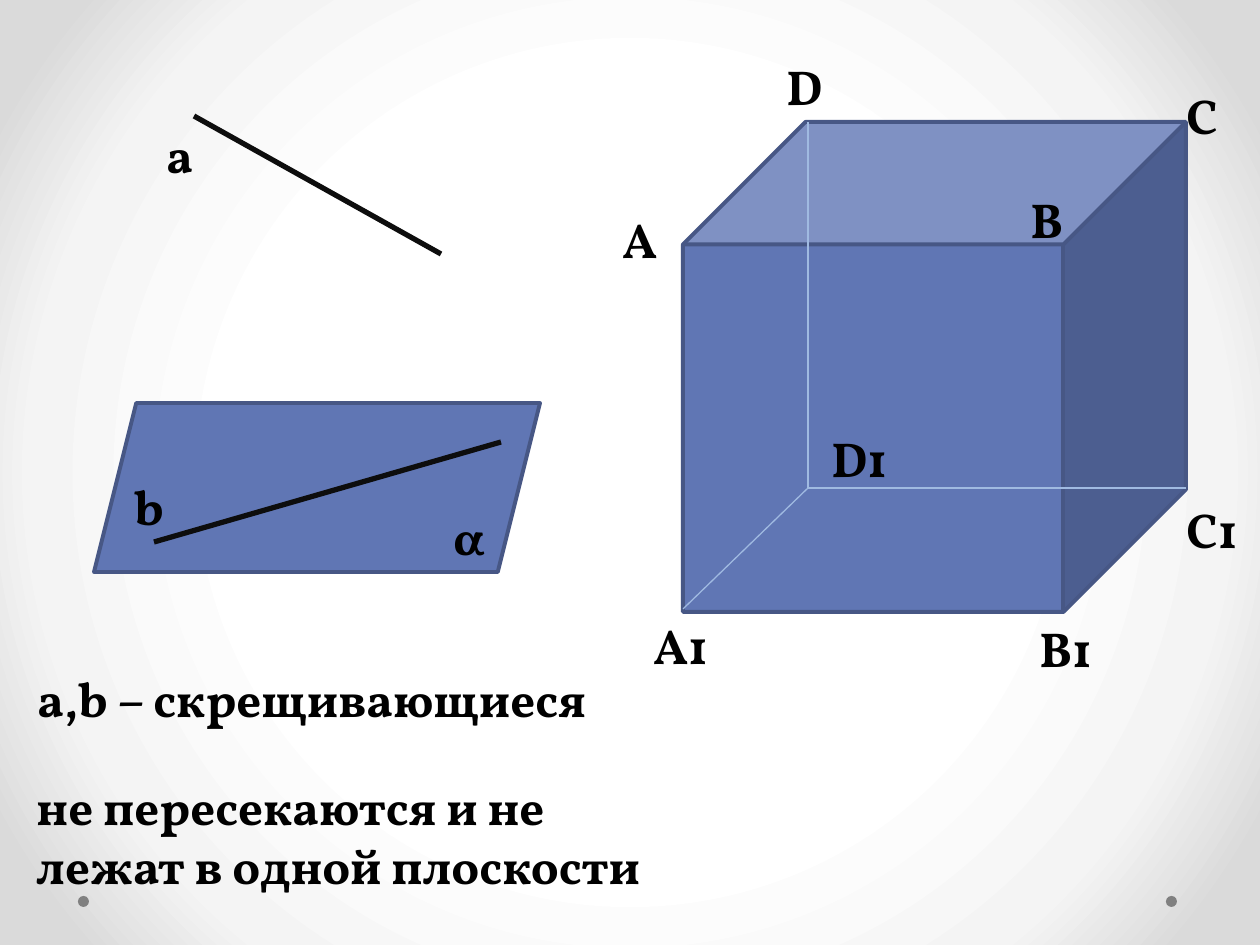
from dataclasses import dataclass

from lxml import etree
from pptx import Presentation
from pptx import util as u
from pptx.dml.color import RGBColor
from pptx.enum import shapes, text
from pptx.oxml import parse_xml
from pptx.oxml.ns import nsdecls, qn

PX = 914400 / 126  # EMU per px


def px(length):
    return u.Emu(round(length * PX))


@dataclass(frozen=True)
class Theme:
    font: str = "Vollkorn"
    size: int = 28
    ink: str = "000000"
    stroke: str = "0D0D0D"
    solid: str = "6076B4"
    edge: str = "475785"
    hidden: str = "A0BAE1"
    dot: str = "808080"
    glow: tuple = ((50, "FFFFFF"), (76, "F4F4F4"), (92, "DADADA"))


class Board:
    def __init__(self, slide, theme):
        self.slide = slide
        self.theme = theme

    def background(self):
        fill = self.slide.background.fill
        fill.gradient()
        gradient = self.slide.background._cSld.find(".//" + qn("a:gradFill"))
        stops = "".join(
            f'<a:gs pos="{pos * 1000}"><a:srgbClr val="{color}"/></a:gs>'
            for pos, color in self.theme.glow)
        radial = parse_xml(
            f'<a:gradFill {nsdecls("a")} rotWithShape="1"><a:gsLst>{stops}</a:gsLst>'
            '<a:path path="circle"><a:fillToRect l="50000" t="50000" r="50000" b="50000"/>'
            '</a:path></a:gradFill>')
        gradient.getparent().replace(gradient, radial)

    def figure(self, kind, left, top, width, height, fill, edge=None):
        figure = self.slide.shapes.add_shape(
            kind, px(left), px(top), px(width), px(height))
        figure.shadow.inherit = False
        figure.fill.solid()
        figure.fill.fore_color.rgb = RGBColor.from_string(fill)
        if edge:
            figure.line.color.rgb = RGBColor.from_string(edge)
            figure.line.width = u.Pt(2.25)
        else:
            figure.line.fill.background()

    def line(self, start, end, color, weight):
        line = self.slide.shapes.add_connector(
            shapes.MSO_CONNECTOR.STRAIGHT, *map(px, start + end))
        line.line.color.rgb = RGBColor.from_string(color)
        line.line.width = u.Pt(weight)
        etree.SubElement(line._element.spPr, qn("a:effectLst"))

    def label(self, words, left, top, width, height=72, wrap=True):
        box = self.slide.shapes.add_textbox(px(left), px(top), px(width), px(height))
        frame = box.text_frame
        frame.word_wrap = wrap
        frame.auto_size = text.MSO_AUTO_SIZE.SHAPE_TO_FIT_TEXT
        frame.text = words
        font = frame.paragraphs[0].runs[0].font
        font.name = self.theme.font
        font.size = u.Pt(self.theme.size)
        font.bold = True
        font.color.rgb = RGBColor.from_string(self.theme.ink)


def main():
    deck = Presentation()
    deck.slide_width, deck.slide_height = u.Inches(10), u.Inches(7.5)
    theme = Theme()
    board = Board(deck.slides.add_slide(deck.slide_layouts[6]), theme)
    preset = shapes.MSO_SHAPE

    # Backdrop with its two corner dots
    board.background()
    for dot_left in (1166, 78):
        board.figure(preset.OVAL, dot_left, 896, 11, 11, theme.dot)

    # Plane α with line b in it, and line a above
    board.figure(preset.PARALLELOGRAM, 94, 403, 446, 169, theme.solid, theme.edge)
    board.line((154, 542), (501, 442), theme.stroke, 3)
    board.line((194, 116), (441, 254), theme.stroke, 3)
    board.label("a", 154, 118, 49)
    board.label("b", 122, 470, 55, wrap=False)
    board.label("α", 441, 500, 159)

    # Definition
    board.label("a,b – скрещивающиеся", 25, 662, 586)
    board.label("не пересекаются и не лежат в одной плоскости", 24, 770, 660, 131)

    # Cube and the names of its vertices
    board.figure(preset.CUBE, 683, 122, 503, 490, theme.solid, theme.edge)
    vertices = (
        ("A", 610, 203, 69), ("A1", 641, 609, 113),
        ("B", 1018, 183, 59), ("B1", 1027, 612, 102),
        ("C", 1174, 79, 69), ("C1", 1174, 493, 86),
        ("D", 774, 50, 69), ("D1", 819, 422, 95),
    )
    for name, left, top, width in vertices:
        board.label(name, left, top, width)

    # Hidden edges, all meeting at D1
    back_corner = (808, 488)
    for neighbour in ((808, 122), (1186, 488), (683, 609)):
        board.line(back_corner, neighbour, theme.hidden, 0.75)

    deck.save("out.pptx")


if __name__ == "__main__":
    main()
